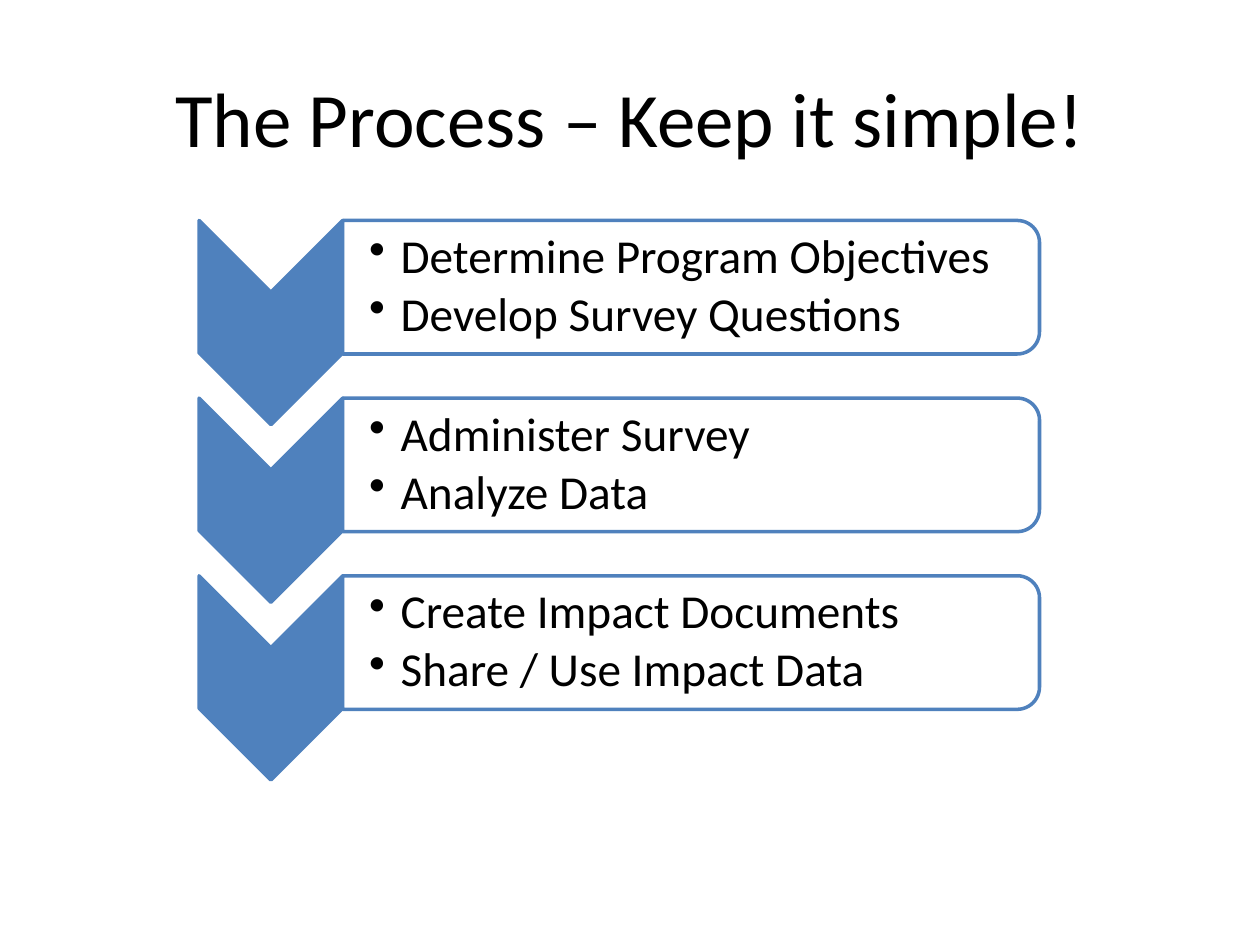
from lxml.etree import SubElement
from pptx import Presentation
from pptx.dml.color import RGBColor
from pptx.enum.shapes import MSO_SHAPE as Shape
from pptx.enum.text import MSO_ANCHOR as Anchor, PP_ALIGN as Align
from pptx.oxml.ns import qn
from pptx.util import Inches, Pt

TITLE = "The Process – Keep it simple!"
STEPS = [
    ("Determine Program Objectives", "Develop Survey Questions"),
    ("Administer Survey", "Analyze Data"),
    ("Create Impact Documents", "Share / Use Impact Data"),
]
FONT, BLUE, WHITE, BLACK = "Calibri", "4F81BD", "FFFFFF", "000000"
FIRST_TOP, STEP_PITCH = 1.75, 1.41
ARROW_LEFT, ARROW_WIDTH, ARROW_HEIGHT = 1.58, 1.14, 1.62
BAR_LEFT, BAR_WIDTH, BAR_HEIGHT = 2.72, 5.53, 1.06
TEXT_WIDTH, TEXT_HEIGHT = 5.48, 0.95


def color(value):
    """Turn a hex string into a colour."""
    return RGBColor.from_string(value)


def style_font(font, size):
    """Set the common typeface and colour at the given size."""
    font.name, font.size = FONT, Pt(size)
    font.color.rgb = color(BLACK)


def add_turned(page, kind, left, top, width, height, fill):
    """Add a shape turned a quarter so that it covers the given area."""
    shape = page.shapes.add_shape(
        kind,
        Inches(left + (width - height) / 2), Inches(top + (height - width) / 2),
        Inches(height), Inches(width))
    shape.rotation = 90
    shape.shadow.inherit = False
    shape.fill.solid()
    shape.fill.fore_color.rgb = color(fill)
    shape.line.color.rgb = color(BLUE)
    shape.line.width = Pt(2)
    return shape


def add_bullets(page, left, top, items):
    """Add a text box holding a bulleted list."""
    box = page.shapes.add_textbox(
        Inches(left), Inches(top), Inches(TEXT_WIDTH), Inches(TEXT_HEIGHT))
    frame = box.text_frame
    frame.word_wrap = True
    frame.vertical_anchor = Anchor.MIDDLE
    frame.margin_left = Inches(0.21)
    frame.margin_top = frame.margin_right = frame.margin_bottom = Inches(0.02)
    frame.text = "\n".join(items)
    for para in frame.paragraphs:
        props = para._p.get_or_add_pPr()
        props.set("marL", str(Inches(0.25)))
        props.set("indent", str(-Inches(0.25)))
        SubElement(props, qn("a:buChar"), char="•")
        para.line_spacing = 0.9
        para.space_after = Pt(4)
        for span in para.runs:
            style_font(span.font, 27)


def add_step(page, top, items):
    """Add one step: a down arrow, its bar and its list."""
    add_turned(page, Shape.CHEVRON, ARROW_LEFT, top,
               ARROW_WIDTH, ARROW_HEIGHT, BLUE)
    bar = add_turned(page, Shape.ROUND_2_SAME_RECTANGLE, BAR_LEFT, top,
                     BAR_WIDTH, BAR_HEIGHT, WHITE)
    fill = bar._element.spPr.find(qn("a:solidFill"))
    SubElement(fill[0], qn("a:alpha"), val="90000")
    add_bullets(page, BAR_LEFT, top + (BAR_HEIGHT - TEXT_HEIGHT) / 2, items)


def add_title(page):
    """Fill and place the title."""
    title = page.shapes.title
    title.left, title.top = Inches(0.5), Inches(0.3)
    title.width, title.height = Inches(9), Inches(1.25)
    frame = title.text_frame
    frame.text = TITLE
    frame.vertical_anchor = Anchor.MIDDLE
    para = frame.paragraphs[0]
    para.alignment = Align.CENTER
    style_font(para.runs[0].font, 44)


def main():
    """Build and save the deck."""
    deck = Presentation()
    deck.slide_width, deck.slide_height = Inches(10), Inches(7.5)
    page = deck.slides.add_slide(deck.slide_layouts[5])
    add_title(page)
    for index, items in enumerate(STEPS):
        add_step(page, FIRST_TOP + index * STEP_PITCH, items)
    deck.save("out.pptx")


if __name__ == "__main__":
    main()
